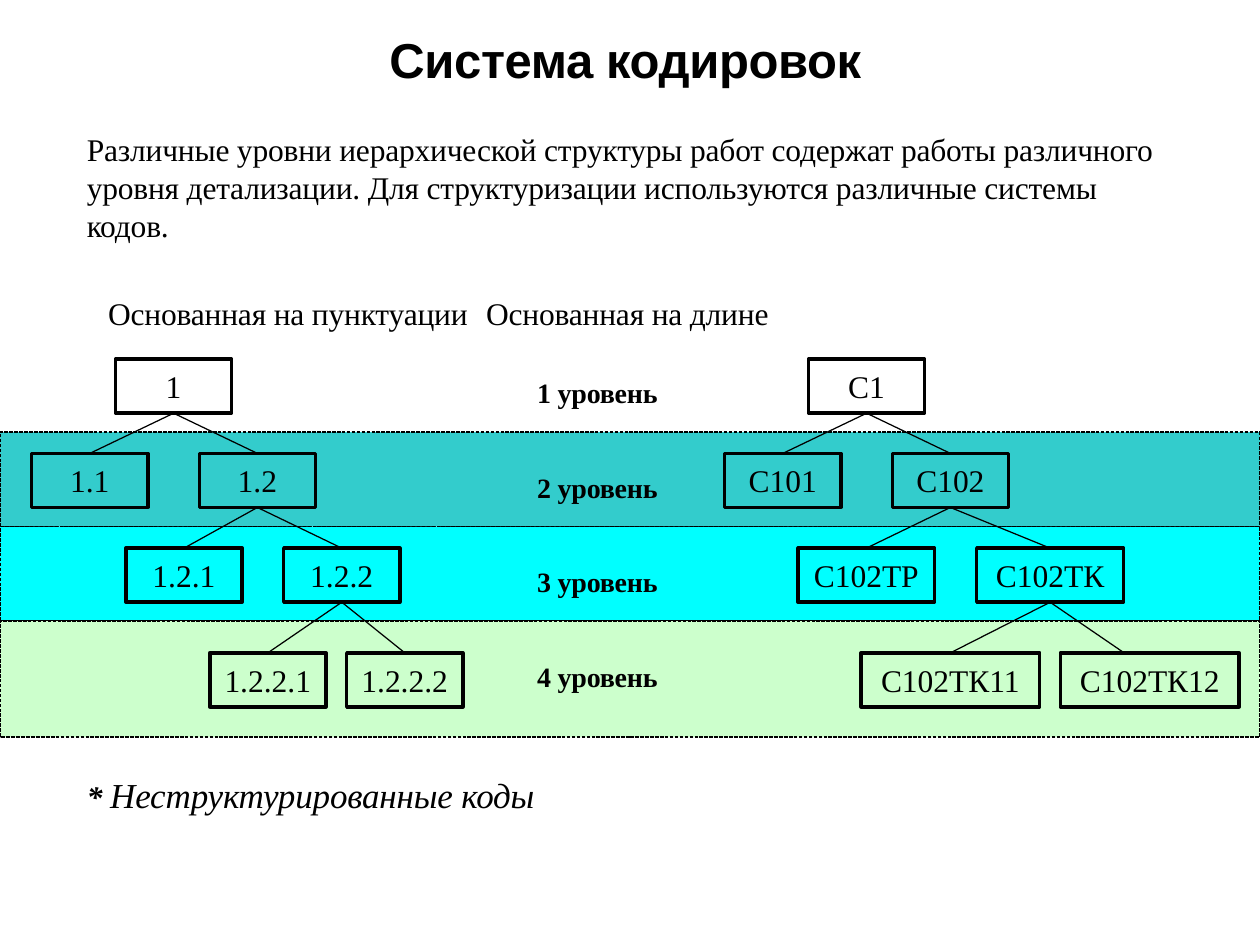
from lxml import etree
from pptx import Presentation
from pptx.dml.color import RGBColor
from pptx.enum.dml import MSO_LINE
from pptx.enum.shapes import MSO_CONNECTOR, MSO_SHAPE
from pptx.enum.text import MSO_ANCHOR, PP_ALIGN
from pptx.oxml.ns import qn
from pptx.util import Cm, Pt

SERIF = {"name": "Times New Roman", "size": Pt(18), "bold": False, "italic": False}
INK = "000000"
FRAME = {"margin_left": 0, "margin_top": 0, "margin_right": 0, "margin_bottom": 0,
         "word_wrap": True}


def paint(target, hex_value):
    """Give a fill one solid colour."""
    target.solid()
    target.fore_color.rgb = RGBColor.from_string(hex_value)


def write(paragraph, text, spacing=-10, **changes):
    """Add a run; spacing is in hundredths of a point."""
    run = paragraph.add_run()
    run.text = text
    for name, value in {**SERIF, **changes}.items():
        setattr(run.font, name, value)
    paint(run.font.fill, INK)
    run.font._element.set("spc", str(spacing))


presentation = Presentation()
presentation.slide_width, presentation.slide_height = Cm(25.4), Cm(19.05)
slide = presentation.slides.add_slide(presentation.slide_layouts[5])
shapes = slide.shapes

# Title
title = shapes.title
title.left, title.top, title.width, title.height = Cm(7.85), Cm(0.6), Cm(9.7), Cm(1.25)
for name, value in {**FRAME, "vertical_anchor": MSO_ANCHOR.TOP}.items():
    setattr(title.text_frame, name, value)
title_paragraph = title.text_frame.paragraphs[0]
title_paragraph.alignment = PP_ALIGN.LEFT
write(title_paragraph, "Система кодировок", -20, name="Arial", size=Pt(28), bold=True)

# Bands of levels 2 to 4: top, height, colour
bands = {2: (8.71, 1.91, "33CCCC"), 3: (10.62, 1.9, "00FFFF"), 4: (12.52, 2.34, "CCFFCC")}
for top, height, band_colour in bands.values():
    band = shapes.add_shape(MSO_SHAPE.RECTANGLE, 0, Cm(top), Cm(25.4), Cm(height))
    band.shadow.inherit = False
    paint(band.fill, band_colour)
    paint(band.line.fill, INK)
    band.line.width = Pt(0.72)
    band.line.dash_style = MSO_LINE.SQUARE_DOT

# Code trees: code, level, left, width, parent
nodes = [
    ("1", 1, 2.33, 2.34, None),
    ("1.1", 2, 0.64, 2.34, "1"),
    ("1.2", 2, 4.02, 2.34, "1"),
    ("1.2.1", 3, 2.54, 2.34, "1.2"),
    ("1.2.2", 3, 5.72, 2.34, "1.2"),
    ("1.2.2.1", 4, 4.23, 2.34, "1.2.2"),
    ("1.2.2.2", 4, 6.99, 2.34, "1.2.2"),
    ("С1", 1, 16.3, 2.34, None),
    ("С101", 2, 14.61, 2.34, "С1"),
    ("С102", 2, 17.99, 2.34, "С1"),
    ("С102ТР", 3, 16.09, 2.75, "С102"),
    ("С102ТК", 3, 19.69, 2.96, "С102"),
    ("С102ТК11", 4, 17.36, 3.6, "С102ТК"),
    ("С102ТК12", 4, 21.38, 3.6, "С102ТК"),
]
level_tops = {1: 7.24, 2: 9.14, 3: 11.05, 4: 13.16}
box_height = 1.09
off_centre_ends = {"С102ТК12": 22.66}
bottoms = {}

for code, level, left, width, parent in nodes:
    top, centre = level_tops[level], left + width / 2
    bottoms[code] = (centre, top + box_height)

    # Branch from the parent
    if parent:
        start_x, start_y = bottoms[parent]
        branch = shapes.add_connector(
            MSO_CONNECTOR.STRAIGHT, Cm(start_x), Cm(start_y),
            Cm(off_centre_ends.get(code, centre)), Cm(top))
        paint(branch.line.fill, INK)
        branch.line.width = Pt(0.72)
        etree.SubElement(branch._element.spPr, qn("a:effectLst"))

    # Box with the code
    box = shapes.add_shape(MSO_SHAPE.RECTANGLE, Cm(left), Cm(top), Cm(width), Cm(box_height))
    box.shadow.inherit = False
    if level in bands:
        paint(box.fill, bands[level][2])
    else:
        box.fill.background()
    paint(box.line.fill, INK)
    box.line.width = Pt(2.04)
    for name, value in {**FRAME, "vertical_anchor": MSO_ANCHOR.MIDDLE}.items():
        setattr(box.text_frame, name, value)
    box_paragraph = box.text_frame.paragraphs[0]
    box_paragraph.alignment = PP_ALIGN.CENTER
    write(box_paragraph, code, 0)

# Text boxes: left, top, width, height, runs of the first paragraph
bold_label = {"size": Pt(16), "bold": True}
texts = [
    (1.75, 2.62, 21.84, 4.06, [(
        "Различные уровни иерархической структуры работ содержат работы различного "
        "уровня детализации. Для структуризации используются различные системы кодов.", {})]),
    (1.75, 15.6, 9.2, 0.91, [
        ("* ", {"bold": True, "italic": True}),
        ("Неструктурированные коды", {"size": Pt(20), "italic": True})]),
]
for number in range(1, 5):
    label_top = 7.58 + 1.905 * (number - 1)
    texts.append((10.83, label_top, 2.6, 0.74, [(f"{number} уровень", bold_label)]))

paragraphs = []
for left, top, width, height, runs in texts:
    text_box = shapes.add_textbox(Cm(left), Cm(top), Cm(width), Cm(height))
    for name, value in FRAME.items():
        setattr(text_box.text_frame, name, value)
    paragraph = text_box.text_frame.paragraphs[0]
    for text, changes in runs:
        write(paragraph, text, **changes)
    paragraphs.append((text_box, paragraph))

# Headings of the two trees, under the introduction
introduction_box, introduction = paragraphs[0]
introduction.line_spacing = Pt(21.6)
headings = introduction_box.text_frame.add_paragraph()
properties = headings._p.get_or_add_pPr()
properties.set("marL", str(Cm(0.43)))
properties.set("indent", "0")
tab_list = etree.SubElement(properties, qn("a:tabLst"))
etree.SubElement(tab_list, qn("a:tab"), pos=str(Cm(12.93)), algn="l")
headings.space_before = Pt(29)
write(headings, "Основанная на пунктуации\tОснованная на длине")

presentation.save("out.pptx")
